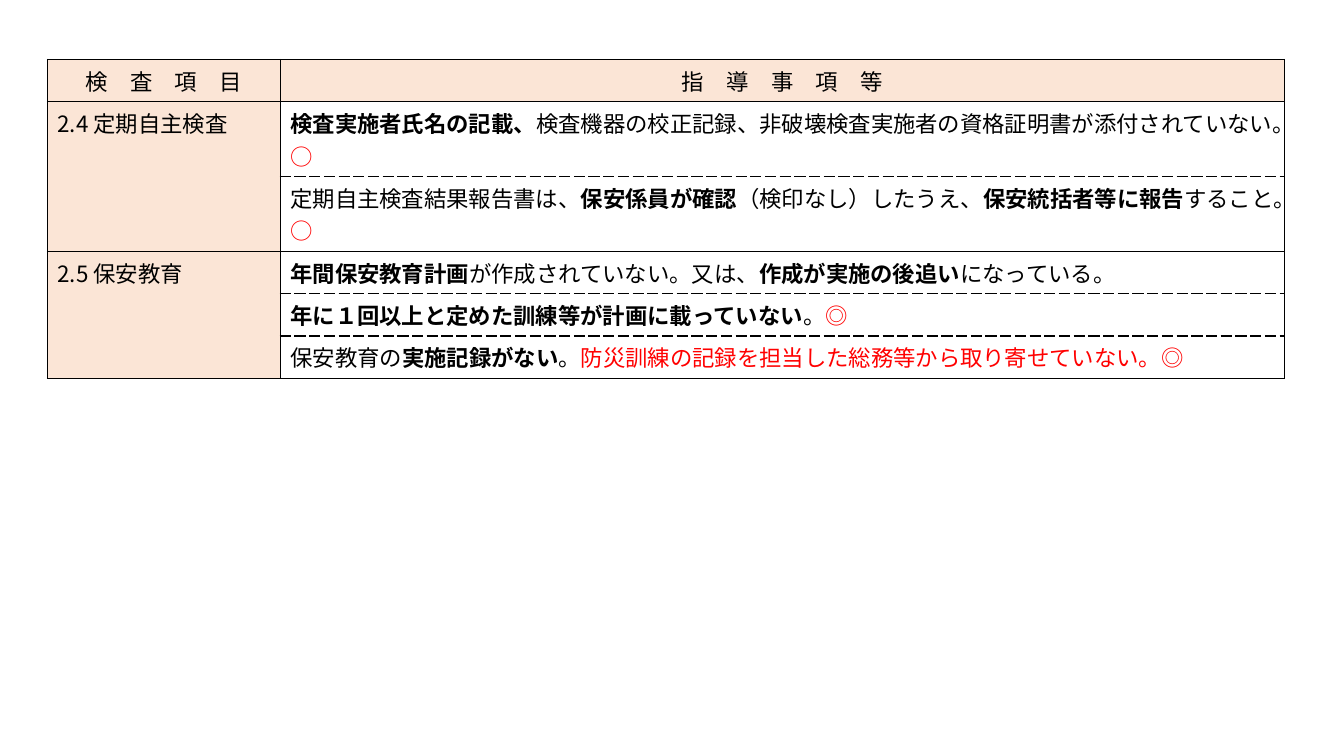
from lxml.etree import SubElement
from pptx import Presentation
from pptx.dml.color import RGBColor
from pptx.enum.lang import MSO_LANGUAGE_ID
from pptx.enum.text import PP_ALIGN
from pptx.oxml.ns import qn
from pptx.util import Inches, Pt

BLACK = RGBColor(0x00, 0x00, 0x00)
RED = RGBColor(0xFF, 0x00, 0x00)
PEACH = RGBColor(0xFB, 0xE5, 0xD6)
FONT = "Noto Sans CJK JP"

PLAIN, BOLD, MARKED = (False, BLACK), (True, BLACK), (False, RED)

HEADINGS = ["検　査　項　目", "指　導　事　項　等"]
SECTIONS = [
    ("2.4 定期自主検査", [
        [("検査実施者氏名の記載、", BOLD),
         ("検査機器の校正記録、非破壊検査実施者の資格証明書が添付されていない。", PLAIN),
         ("○", MARKED)],
        [("定期自主検査結果報告書は、", PLAIN), ("保安係員が確認", BOLD),
         ("（検印なし）したうえ、", PLAIN), ("保安統括者等に報告", BOLD),
         ("すること。", PLAIN), ("○", MARKED)],
    ]),
    ("2.5 保安教育", [
        [("年間保安教育計画", BOLD), ("が作成されていない。又は、", PLAIN),
         ("作成が実施の後追い", BOLD), ("になっている。", PLAIN)],
        [("年に１回以上と定めた訓練等が計画に載っていない", BOLD),
         ("。", PLAIN), ("◎", MARKED)],
        [("保安教育の", PLAIN), ("実施記録がない", BOLD), ("。", PLAIN),
         ("防災訓練の記録を担当した総務等から取り寄せていない。◎", MARKED)],
    ]),
]
COLUMN_WIDTHS = [2.31, 9.96]
ROW_HEIGHTS = [0.42, 0.74, 0.74, 0.42, 0.42, 0.42]


def write_cell(cell, runs, align=PP_ALIGN.LEFT):
    """Write styled runs into a table cell."""
    paragraph = cell.text_frame.paragraphs[0]
    paragraph.alignment = align
    for wording, (bold, color) in runs:
        run = paragraph.add_run()
        run.text = wording
        run.font.size = Pt(16)
        run.font.bold = bold
        run.font.color.rgb = color
        run.font.name = FONT
        run.font.language_id = MSO_LANGUAGE_ID.JAPANESE
        SubElement(run.font._element, qn("a:ea"), typeface=FONT)


def style_cell(cell, fill=None, dashed=""):
    """Draw the four borders, dashing the named sides, and fill the cell."""
    properties = cell._tc.get_or_add_tcPr()
    for side in "LRTB":
        border = SubElement(properties, qn(f"a:ln{side}"), w=str(Pt(1)))
        color = SubElement(border, qn("a:solidFill"))
        SubElement(color, qn("a:srgbClr"), val=str(BLACK))
        SubElement(border, qn("a:prstDash"), val="sysDash" if side in dashed else "solid")
    if fill is None:
        cell.fill.background()
    else:
        cell.fill.solid()
        cell.fill.fore_color.rgb = fill


def main():
    """Build the inspection guidance slide."""
    deck = Presentation()
    deck.slide_width, deck.slide_height = Inches(13.33), Inches(7.5)
    slide = deck.slides.add_slide(deck.slide_layouts[6])
    table = slide.shapes.add_table(
        len(ROW_HEIGHTS), len(COLUMN_WIDTHS), Inches(0.47), Inches(0.59),
        Inches(sum(COLUMN_WIDTHS)), Inches(sum(ROW_HEIGHTS))).table
    table.first_row = table.horz_banding = False
    for column, width in zip(table.columns, COLUMN_WIDTHS):
        column.width = Inches(width)
    for row, height in zip(table.rows, ROW_HEIGHTS):
        row.height = Inches(height)

    for index, heading in enumerate(HEADINGS):
        style_cell(table.cell(0, index), PEACH)
        write_cell(table.cell(0, index), [(heading, PLAIN)], PP_ALIGN.CENTER)

    first = 1
    for item, findings in SECTIONS:
        last = first + len(findings) - 1
        table.cell(first, 0).merge(table.cell(last, 0))
        write_cell(table.cell(first, 0), [(item, PLAIN)])
        for row, finding in enumerate(findings, first):
            style_cell(table.cell(row, 0), PEACH)
            dashed = ("T" if row > first else "") + ("B" if row < last else "")
            style_cell(table.cell(row, 1), dashed=dashed)
            write_cell(table.cell(row, 1), finding)
        first = last + 1

    deck.save("out.pptx")


if __name__ == "__main__":
    main()
